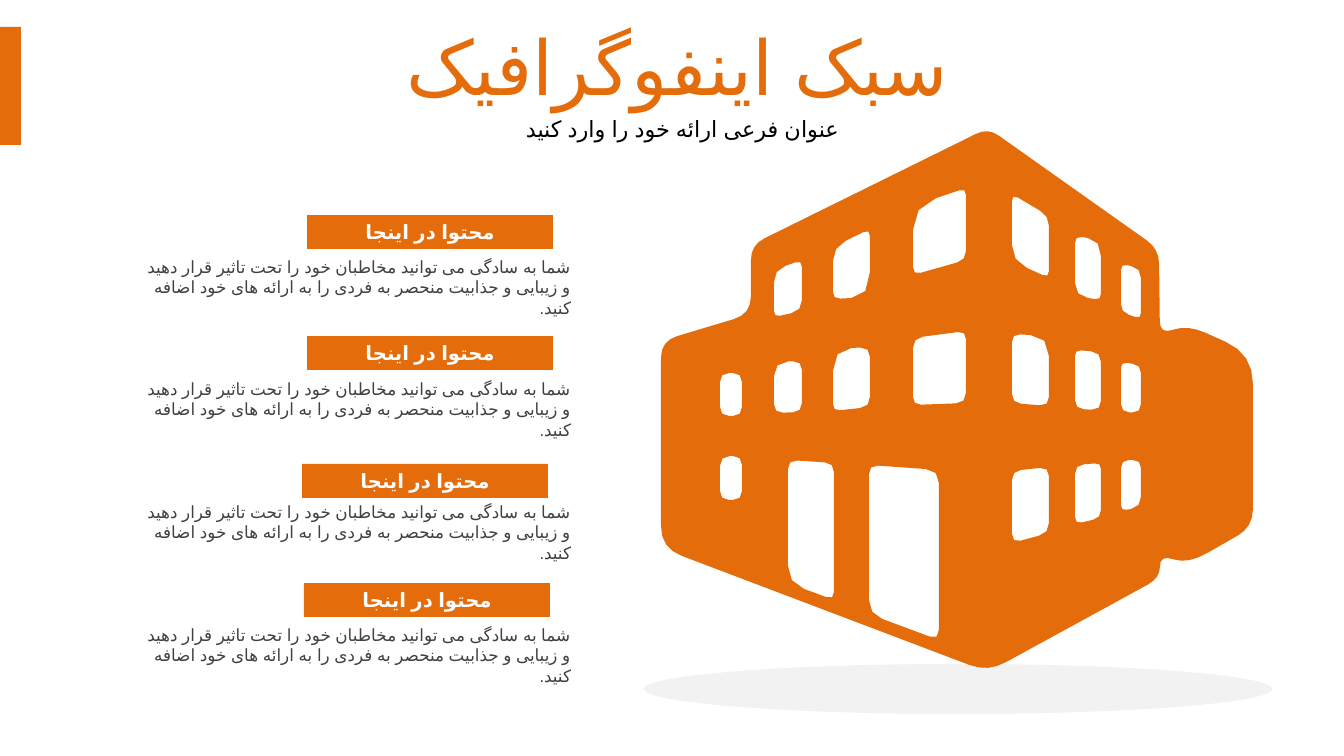
"""Build a right-to-left infographic slide with a building and four text blocks."""
from math import hypot

from lxml import etree
from pptx import Presentation
from pptx.dml.color import RGBColor
from pptx.enum.shapes import MSO_SHAPE
from pptx.enum.text import MSO_ANCHOR, MSO_AUTO_SIZE, PP_ALIGN
from pptx.oxml.ns import qn
from pptx.util import Pt

RECT, OVAL = MSO_SHAPE.RECTANGLE, MSO_SHAPE.OVAL
TOP, MIDDLE = MSO_ANCHOR.TOP, MSO_ANCHOR.MIDDLE
CENTER, RIGHT = PP_ALIGN.CENTER, PP_ALIGN.RIGHT
GROW = MSO_AUTO_SIZE.SHAPE_TO_FIT_TEXT

PX = 914400 / 100.8
FONT = "Arial"
LANGUAGE = "fa-IR"
COLORS = {"orange": "E46C0A", "shadow": "F2F2F2", "black": "000000",
          "white": "FFFFFF", "body": "404040"}

TITLE = "سبک اینفوگرافیک"
SUBTITLE = "عنوان فرعی ارائه خود را وارد کنید"
BADGE = "محتوا در اینجا"
BODY = ("شما به سادگی می توانید مخاطبان خود را تحت تاثیر قرار دهید و "
        "زیبایی و جذابیت منحصر به فردی را به ارائه های خود اضافه کنید.")

# Badge left, badge top, body top
BLOCKS = [(307, 215, 252), (307, 336, 374), (302, 464, 497), (304, 583, 620)]

# Corner x, corner y, rounding
WALLS = [(988, 128, 13), (1159, 249, 15), (1160, 334, 13), (1188, 325, 19),
         (1253, 354, 30), (1253, 527, 18), (1188, 564, 22), (1160, 555, 13),
         (1160, 578, 14), (988, 672, 20), (661, 548, 22), (661, 341, 17),
         (751, 314, 18), (751, 245, 15)]

# Left and right edge, then corner heights and roundings clockwise from top left
OPENINGS = {
    (720, 742): [((373, 373, 416, 416), (9, 9, 9, 9)),
                 ((456, 456, 500, 500), (10, 9, 9, 9))],
    (774, 802): [((270, 260, 311, 317), (12, 7, 11, 6)),
                 ((362, 361, 412, 413), (14, 9, 9, 9))],
    (833, 870): [((247, 229, 297, 299), (14, 7, 25, 7)),
                 ((349, 347, 407, 411), (22, 10, 10, 7))],
    (913, 966): [((206, 188, 260, 275), (24, 7, 9, 8)),
                 ((338, 331, 403, 405), (10, 8, 10, 8))],
    (1012, 1049): [((194, 216, 278, 261), (7, 10, 7, 16)),
                   ((334, 336, 406, 403), (8, 20, 9, 9)),
                   ((471, 467, 533, 543), (9, 9, 10, 9))],
    (1075, 1101): [((236, 240, 300, 296), (7, 16, 6, 13)),
                   ((350, 352, 410, 409), (6, 10, 9, 9)),
                   ((465, 463, 518, 524), (9, 6, 8, 7))],
    (1121, 1141): [((264, 268, 319, 312), (6, 10, 6, 8)),
                   ((362, 365, 413, 412), (6, 8, 9, 8)),
                   ((460, 460, 507, 511), (8, 8, 10, 6))],
    (788, 834): [((460, 463, 600, 583), (9, 9, 8, 17))],
    (869, 939): [((465, 470, 640, 614), (9, 13, 10, 14))],
}


def box(*lengths):
    return [round(n * PX) for n in lengths]


def rgb(name):
    return RGBColor.from_string(COLORS[name])


def paint(sp, color):
    sp.shadow.inherit = False
    sp.fill.solid()
    sp.fill.fore_color.rgb = rgb(color)
    sp.line.fill.background()
    return sp


def add_block(s, kind, color, *area):
    return paint(s.shapes.add_shape(kind, *box(*area)), color)


def write(sp, text, size, color, align, anchor, bold=False):
    tf = sp.text_frame
    tf.word_wrap = True
    tf.vertical_anchor = anchor
    p = tf.paragraphs[0]
    p.alignment = align
    p._p.get_or_add_pPr().set("rtl", "1")
    r = p.add_run()
    r.text = text
    r.font.size = Pt(size)
    r.font.bold = bold
    r.font.color.rgb = rgb(color)
    r.font.name = FONT
    rPr = r._r.get_or_add_rPr()
    rPr.set("lang", LANGUAGE)
    etree.SubElement(rPr, qn("a:cs"), typeface=FONT)
    return tf


def add_heading(s, text, size, color, left_inset, *area):
    tf = write(s.shapes.add_textbox(*box(*area)), text, size, color, CENTER, MIDDLE)
    (tf.margin_left, tf.margin_top,
     tf.margin_right, tf.margin_bottom) = box(left_inset, 10, 10, 5)
    p = tf.paragraphs[0]
    p.line_spacing = 0.9
    p.space_before = Pt(10)


def toward(x, y, end, distance):
    length = hypot(end[0] - x, end[1] - y)
    share = min(distance / length, 0.5)
    return x + (end[0] - x) * share, y + (end[1] - y) * share


def rounded(corners, steps):
    points = []
    for i, (x, y, radius) in enumerate(corners):
        ax, ay = toward(x, y, corners[i - 1], radius)
        bx, by = toward(x, y, corners[(i + 1) % len(corners)], radius)
        for t in (n / steps for n in range(steps + 1)):
            u = 1 - t
            points.append(box(u * u * ax + 2 * u * t * x + t * t * bx,
                              u * u * ay + 2 * u * t * y + t * t * by))
    return points


def add_building(s):
    outlines = [rounded(WALLS, 4)]
    for (left, right), column in OPENINGS.items():
        for heights, radii in column:
            xs = (left, right, right, left)
            outlines.append(rounded(list(zip(xs, heights, radii)), 2))
    builder = s.shapes.build_freeform(*outlines[0][0], scale=1.0)
    for i, points in enumerate(outlines):
        if i:
            builder.move_to(*points[0])
        builder.add_line_segments(points[1:], close=True)
    paint(builder.convert_to_shape(), "orange")


def main():
    prs = Presentation()
    prs.slide_width, prs.slide_height = box(1344, 756)
    s = prs.slides.add_slide(prs.slide_layouts[6])
    add_block(s, RECT, "orange", 0, 27, 21, 118)
    add_block(s, OVAL, "shadow", 644, 664, 628, 50)
    add_heading(s, TITLE, 54, "orange", 10, 45, 29, 1265, 80)
    add_heading(s, SUBTITLE, 16, "black", 20, 45, 109, 1265, 38)
    for left, top, body_top in BLOCKS:
        badge = add_block(s, RECT, "orange", left, top, 246, 34)
        write(badge, BADGE, 14, "white", CENTER, MIDDLE, True).auto_size = GROW
        body = s.shapes.add_textbox(*box(126, body_top, 455, 50))
        write(body, BODY, 12, "body", RIGHT, TOP).auto_size = GROW
    add_building(s)
    prs.save("out.pptx")


if __name__ == "__main__":
    main()
